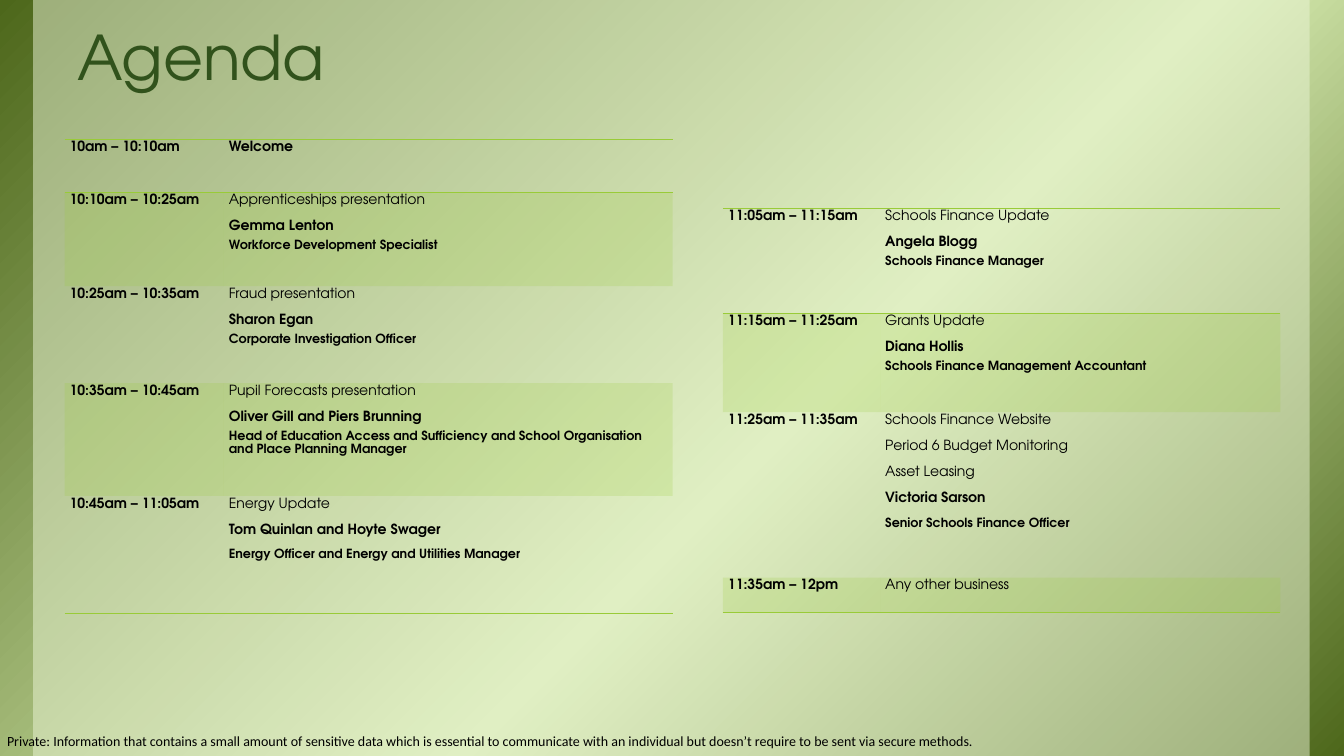
from dataclasses import dataclass

from lxml.etree import SubElement
from pptx import Presentation
from pptx.dml.color import RGBColor
from pptx.dml.fill import FillFormat
from pptx.enum.shapes import MSO_SHAPE
from pptx.enum.text import MSO_ANCHOR
from pptx.oxml import parse_xml
from pptx.oxml.ns import nsdecls, qn
from pptx.slide import Slide
from pptx.table import _Cell as Cell
from pptx.text.text import _Paragraph as Paragraph
from pptx.util import Inches, Pt

COLOURS = {
    "edge": "4D671B",
    "glow": "D6EAAF",
    "veil": "EBF5D7",
    "accent": "99CB38",
    "title": "31521C",
    "text": "000000",
}
HEADING_FONT = "TeX Gyre Adventor"
FOOTER_FONT = "Calibri"
PLAIN_TABLE_STYLE = "{2D5ABB26-0587-4C30-8999-92F81FD0307C}"


@dataclass(frozen=True)
class Style:
    size: float
    bold: bool


TOPIC = Style(10, False)
NAME = Style(10, True)
ROLE = Style(9, True)


@dataclass(frozen=True)
class Session:
    time: str
    height: float
    lines: list[tuple[str, Style]]
    gap: float = 4  # points after a name or role


@dataclass(frozen=True)
class Agenda:
    left: float
    top: float
    columns: tuple[float, float]
    sessions: list[Session]


AGENDAS = [
    Agenda(0.64, 1.38, (1.58, 4.45), [
        Session("10am – 10:10am", 0.53, [("Welcome", NAME)]),
        Session("10:10am – 10:25am", 0.93, [
            ("Apprenticeships presentation", TOPIC),
            ("Gemma Lenton", NAME),
            ("Workforce Development Specialist", ROLE)]),
        Session("10:25am – 10:35am", 0.96, [
            ("Fraud presentation", TOPIC),
            ("Sharon Egan", NAME),
            ("Corporate Investigation Officer", ROLE)]),
        Session("10:35am – 10:45am", 1.12, [
            ("Pupil Forecasts presentation", TOPIC),
            ("Oliver Gill and Piers Brunning", NAME),
            ("Head of Education Access and Sufficiency and School Organisation "
             "and Place Planning Manager", ROLE)]),
        Session("10:45am – 11:05am", 1.17, [
            ("Energy Update", TOPIC),
            ("Tom Quinlan and Hoyte Swager", NAME),
            ("Energy Officer and Energy and Utilities Manager", ROLE)], gap=8),
    ]),
    Agenda(7.17, 2.07, (1.56, 3.97), [
        Session("11:05am – 11:15am", 1.04, [
            ("Schools Finance Update", TOPIC),
            ("Angela Blogg", NAME),
            ("Schools Finance Manager", ROLE)]),
        Session("11:15am – 11:25am", 0.98, [
            ("Grants Update", TOPIC),
            ("Diana Hollis", NAME),
            ("Schools Finance Management Accountant", ROLE)]),
        Session("11:25am – 11:35am", 1.64, [
            ("Schools Finance Website", TOPIC),
            ("Period 6 Budget Monitoring", TOPIC),
            ("Asset Leasing", TOPIC),
            ("Victoria Sarson", NAME),
            ("Senior Schools Finance Officer", ROLE)], gap=8),
        Session("11:35am – 12pm", 0.35, [("Any other business", TOPIC)]),
    ]),
]


def colour(name: str) -> RGBColor:
    return RGBColor.from_string(COLOURS[name])


def fill_clear(fill: FillFormat, parent, name: str, opacity: int) -> None:
    """Fill with a partly transparent colour; parent holds the fill element."""
    fill.solid()
    fill.fore_color.rgb = colour(name)
    tint = parent.find(qn("a:solidFill")).find(qn("a:srgbClr"))
    SubElement(tint, qn("a:alpha"), val=str(opacity * 1000))


def set_font(paragraph: Paragraph, font: str, size: float, name: str,
             bold: bool = False) -> None:
    paragraph.font.name = font
    paragraph.font.size = Pt(size)
    paragraph.font.bold = bold
    paragraph.font.color.rgb = colour(name)


def add_panel(slide: Slide, left: float, width: float):
    shape = slide.shapes.add_shape(MSO_SHAPE.RECTANGLE, Inches(left), 0,
                                   Inches(width), Inches(7.5))
    shape.shadow.inherit = False
    shape.line.fill.background()
    return shape


def add_background(slide: Slide) -> None:
    properties = add_panel(slide, 0, 13.33).element.spPr
    stops = "".join(
        f'<a:gs pos="{position * 1000}"><a:srgbClr val="{COLOURS[name]}"/></a:gs>'
        for position, name in ((0, "edge"), (58, "glow"), (100, "edge")))
    properties.find(qn("a:prstGeom")).addnext(parse_xml(
        f'<a:gradFill {nsdecls("a")} rotWithShape="1"><a:gsLst>{stops}</a:gsLst>'
        f'<a:lin ang="{45 * 60000}" scaled="0"/></a:gradFill>'))
    veil = add_panel(slide, 0.33, 12.66)
    fill_clear(veil.fill, veil.element.spPr, "veil", 50)


def add_label(slide: Slide, box: tuple[float, float, float, float], text: str,
              margins: tuple[float, float], wrap: bool) -> Paragraph:
    frame = slide.shapes.add_textbox(*map(Inches, box)).text_frame
    frame.word_wrap = wrap
    frame.margin_left = frame.margin_right = Inches(margins[0])
    frame.margin_top = frame.margin_bottom = Inches(margins[1])
    frame.vertical_anchor = MSO_ANCHOR.BOTTOM
    paragraph = frame.paragraphs[0]
    paragraph.text = text
    return paragraph


def write_cell(cell: Cell, lines: list[tuple[str, Style]], gap: float) -> None:
    cell.margin_left = cell.margin_right = Inches(0.05)
    cell.margin_top = cell.margin_bottom = 0
    frame = cell.text_frame
    for index, (text, style) in enumerate(lines):
        paragraph = frame.add_paragraph() if index else frame.paragraphs[0]
        paragraph.text = text
        paragraph.line_spacing = 1.15
        paragraph.space_after = Pt(8 if style is TOPIC else gap)
        set_font(paragraph, HEADING_FONT, style.size, "text", style.bold)


def paint_cell(cell: Cell, shaded: bool, sides: list[str]) -> None:
    properties = cell._tc.get_or_add_tcPr()
    if shaded:
        fill_clear(cell.fill, properties, "accent", 20)
    else:
        cell.fill.background()
    for index, side in enumerate(sides):
        properties.insert(index, parse_xml(
            f'<a:ln{side} {nsdecls("a")} w="{Pt(1)}"><a:solidFill>'
            f'<a:srgbClr val="{COLOURS["accent"]}"/></a:solidFill></a:ln{side}>'))


def add_agenda(slide: Slide, agenda: Agenda) -> None:
    sessions = agenda.sessions
    frame = slide.shapes.add_table(
        len(sessions), 2, Inches(agenda.left), Inches(agenda.top),
        Inches(sum(agenda.columns)), Inches(sum(s.height for s in sessions)))
    table = frame.table
    table.first_row = table.horz_banding = False
    frame.element.find(".//" + qn("a:tableStyleId")).text = PLAIN_TABLE_STYLE
    for column, width in zip(table.columns, agenda.columns):
        column.width = Inches(width)
    for row, session in enumerate(sessions):
        table.rows[row].height = Inches(session.height)
        write_cell(table.cell(row, 0), [(session.time, NAME)], session.gap)
        write_cell(table.cell(row, 1), session.lines, session.gap)
        # Rules frame the first row and close the last one
        sides = ["T"] if row == 0 else []
        if row in (0, len(sessions) - 1):
            sides.append("B")
        for cell in table.rows[row].cells:
            paint_cell(cell, row % 2 == 1, sides)


def main() -> None:
    presentation = Presentation()
    presentation.slide_width = Inches(13.33)
    presentation.slide_height = Inches(7.5)
    slide = presentation.slides.add_slide(presentation.slide_layouts[6])
    add_background(slide)

    # Footer and title
    footer = add_label(
        slide, (0.07, 7.26, 9.66, 0.17),
        "Private: Information that contains a small amount of sensitive data which is "
        "essential to communicate with an individual but doesn’t require to be sent via "
        "secure methods.", (0, 0), False)
    set_font(footer, FOOTER_FONT, 10, "text")
    title = add_label(slide, (0.64, 0.21, 4, 0.78), "Agenda", (0.13, 0.07), True)
    title.line_spacing = 0.85
    set_font(title, HEADING_FONT, 44, "title")

    # Timetables
    for agenda in AGENDAS:
        add_agenda(slide, agenda)
    presentation.save("out.pptx")


if __name__ == "__main__":
    main()
